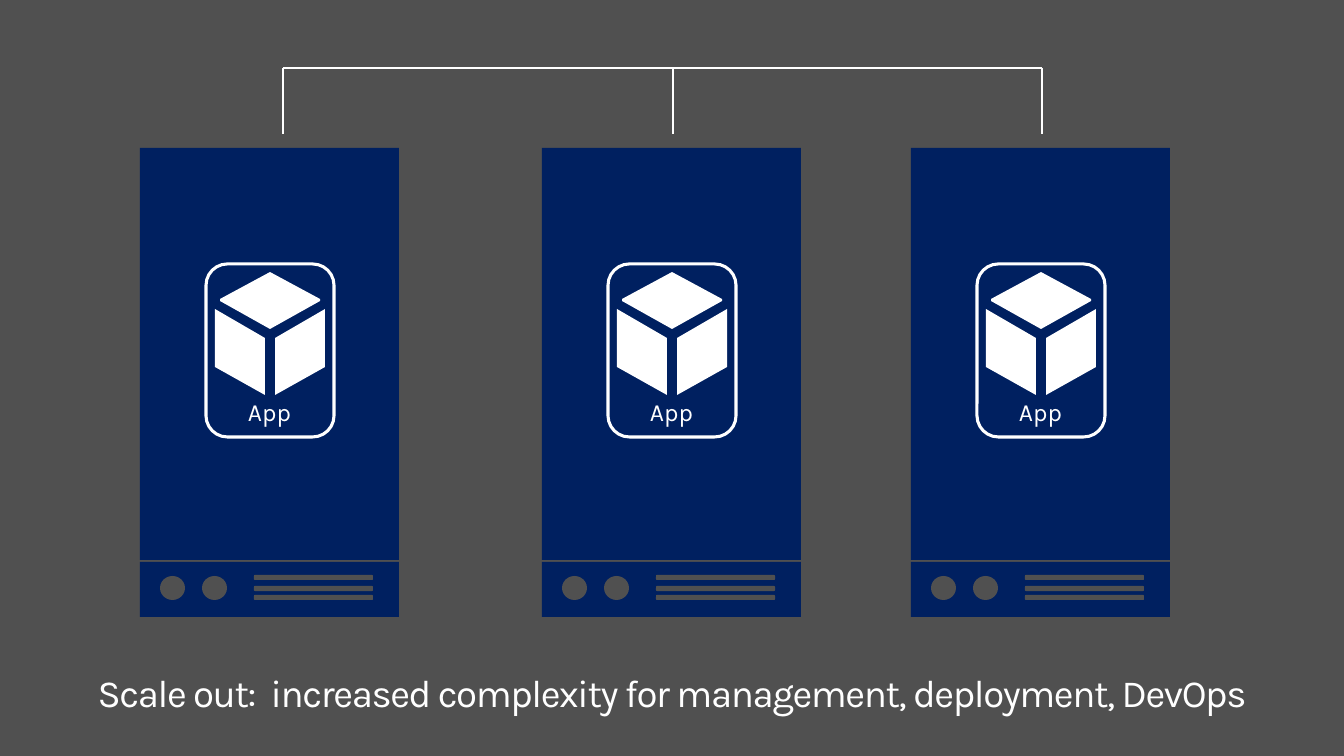
import pptx
import pptx.dml.color
import pptx.enum.shapes
import pptx.enum.text
import pptx.oxml
import pptx.util

PX = 9255
GRAY, NAVY, WHITE = "505050", "002060", "FFFFFF"
MSO = pptx.enum.shapes.MSO_SHAPE


def paint(shape, fill=None, line=None, width=2.25):
    shape.shadow.inherit = False
    for part, color in ((shape.fill, fill), (shape.line.fill, line)):
        if color:
            part.solid()
            part.fore_color.rgb = pptx.dml.color.RGBColor.from_string(color)
        else:
            part.background()
    if line:
        shape.line.width = pptx.util.Pt(width)


def write(shape, text, size, margin_x, margin_y, space_after):
    frame = shape.text_frame
    frame.text = text
    paragraph = frame.paragraphs[0]
    frame_format = {
        "word_wrap": True,
        "auto_size": pptx.enum.text.MSO_AUTO_SIZE.NONE,
        "vertical_anchor": pptx.enum.text.MSO_ANCHOR.TOP,
        "margin_left": margin_x * PX,
        "margin_right": margin_x * PX,
        "margin_top": margin_y * PX,
        "margin_bottom": margin_y * PX,
    }
    paragraph_format = {
        "alignment": pptx.enum.text.PP_ALIGN.CENTER,
        "line_spacing": 0.9,
        "space_before": pptx.util.Pt(0),
        "space_after": pptx.util.Pt(space_after),
    }
    font_format = {"name": "Karla", "size": pptx.util.Pt(size), "bold": False}
    font = paragraph.runs[0].font
    for target, values in ((frame, frame_format), (paragraph, paragraph_format), (font, font_format)):
        for name, value in values.items():
            setattr(target, name, value)
    font.color.rgb = pptx.dml.color.RGBColor.from_string(WHITE)
    return font


presentation = pptx.Presentation()
presentation.slide_width = 1344 * PX
presentation.slide_height = 756 * PX
slide = presentation.slides.add_slide(presentation.slide_layouts[5])
slide.background.fill.solid()
slide.background.fill.fore_color.rgb = pptx.dml.color.RGBColor.from_string(GRAY)

title = slide.shapes.title
title.left, title.top, title.width, title.height = 0, 664 * PX, 1344 * PX, 87 * PX
title_font = write(
    title, "Scale out:  increased complexity for management, deployment, DevOps", 28, 16, 10, 0
)
title_font._element.set("spc", "-100")

server_parts = [
    (MSO.RECTANGLE, 0, 148, 259, 412, NAVY),
    (MSO.RECTANGLE, 0, 562, 259, 55, NAVY),
]
server_parts += [(MSO.OVAL, x, 576, 25, 24, GRAY) for x in (20, 62)]
server_parts += [(MSO.ROUNDED_RECTANGLE, 114, y, 119, 5, GRAY) for y in (575, 586, 595)]

cube_faces = [
    [(180, 299), (130, 272), (80, 299), (80, 301), (130, 329), (180, 301)],
    [(135, 338), (135, 395), (185, 367), (185, 309)],
    [(125, 338), (75, 309), (75, 367), (125, 395)],
]

for server_left in (140, 542, 911):
    server = slide.shapes.add_group_shape().shapes
    for kind, x, y, width, height, color in server_parts:
        part = server.add_shape(kind, (server_left + x) * PX, y * PX, width * PX, height * PX)
        paint(part, fill=color)

    app = slide.shapes.add_group_shape().shapes
    for face in cube_faces:
        points = [(server_left + x, y) for x, y in face]
        builder = app.build_freeform(*points[0], scale=PX)
        builder.add_line_segments(points[1:], close=True)
        paint(builder.convert_to_shape(), fill=WHITE)
    frame = app.add_shape(
        MSO.ROUNDED_RECTANGLE, (server_left + 66) * PX, 264 * PX, 128 * PX, 173 * PX
    )
    paint(frame, line=WHITE)
    label = app.add_textbox((server_left + 70) * PX, 384 * PX, 119 * PX, 59 * PX)
    write(label, "App", 18, 20, 16, 6)

bracket = slide.shapes.add_group_shape().shapes
bracket_lines = [(283, 68, 1042, 68)] + [(x, 68, x, 134) for x in (283, 673, 1042)]
for ends in bracket_lines:
    line = bracket.add_connector(
        pptx.enum.shapes.MSO_CONNECTOR.STRAIGHT, *[end * PX for end in ends]
    )
    line.line.color.rgb = pptx.dml.color.RGBColor.from_string(WHITE)
    line.line.width = pptx.util.Pt(1.5)
    line._element.spPr.append(pptx.oxml.parse_xml(
        '<a:effectLst xmlns:a="http://schemas.openxmlformats.org/drawingml/2006/main"/>'
    ))

presentation.save("out.pptx")
